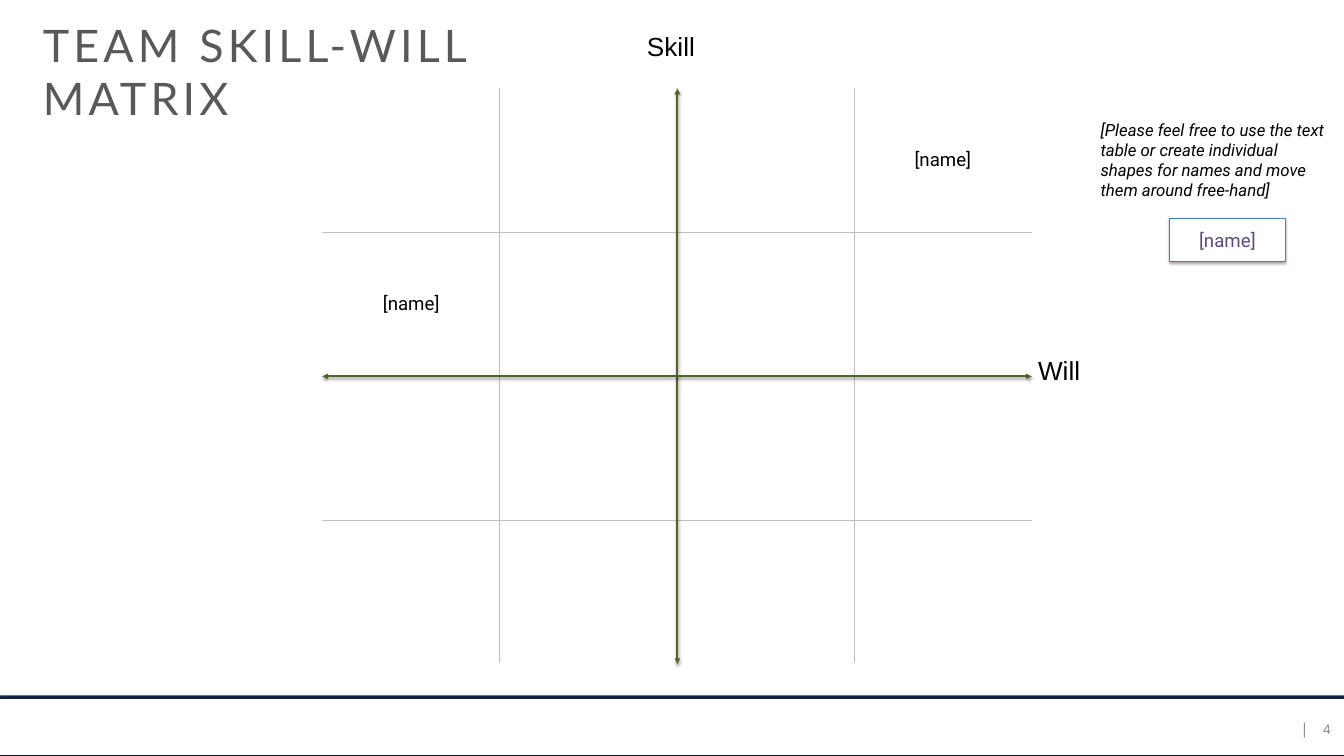
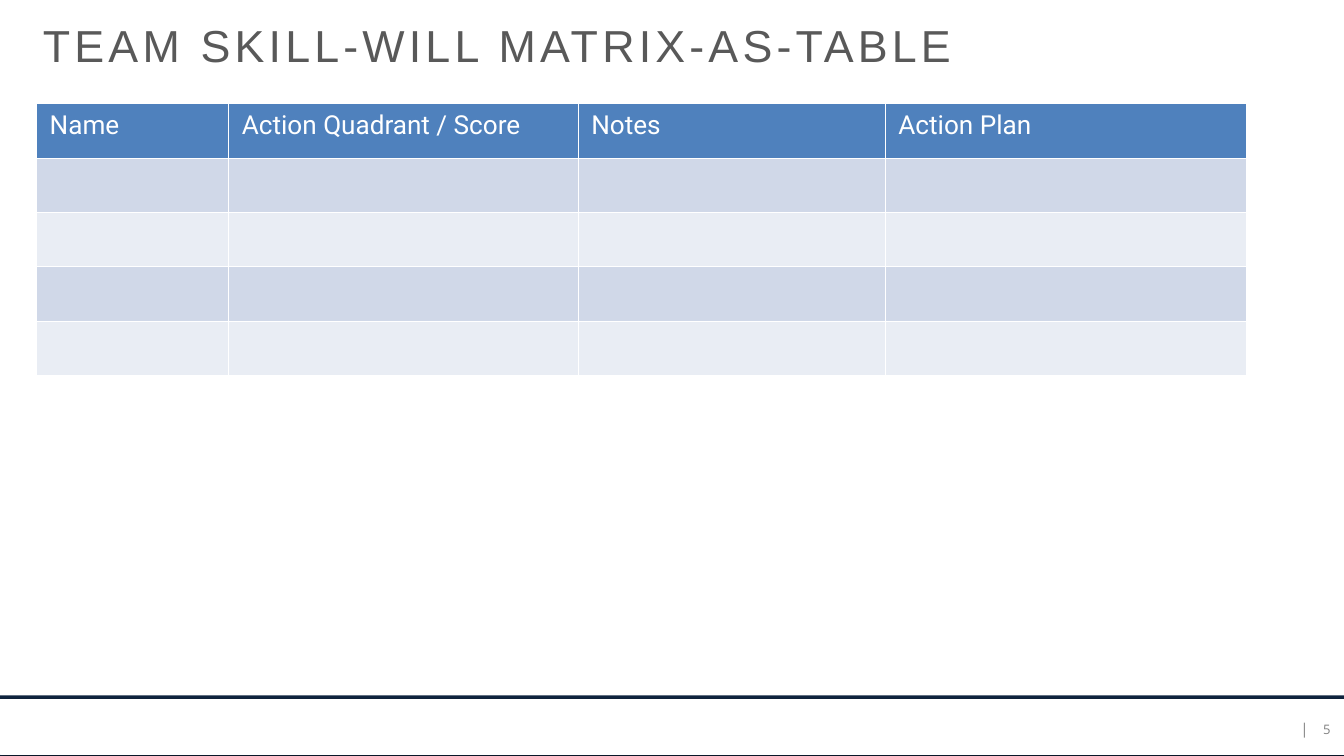
from lxml import etree
from pptx import Presentation
from pptx import util as u
from pptx.dml.color import RGBColor
from pptx.enum import shapes, text
from pptx.oxml import ns

COLORS = {
    "white": "FFFFFF", "navy": "0F243E", "gray": "808080", "title": "595959",
    "grid": "BFBFBF", "axis": "4F6228", "black": "000000", "edge": "4B7EBC",
    "purple": "604A7B", "head": "4F81BD", "dark": "D0D8E8", "light": "E9EDF4",
}
LEFT, MID, RIGHT = text.PP_ALIGN.LEFT, text.PP_ALIGN.CENTER, text.PP_ALIGN.RIGHT


def sub(parent, tag, **attrs):
    return etree.SubElement(parent, ns.qn("a:" + tag), attrs)


def color(name):
    return RGBColor.from_string(COLORS[name])


class Deck:
    def __init__(self):
        self.prs = Presentation()
        self.prs.slide_width = u.Inches(20)
        self.prs.slide_height = u.Inches(11.25)

    def start(self, number, title, font, width):
        self.slide = self.prs.slides.add_slide(self.prs.slide_layouts[6])
        self.rect(0, 0, 20, 11.25, "navy", shade=True)
        self.rect(0, 10.41, 20, 0.82, "white", "white", shade=True)
        self.label(number, 19.55, 10.74, 0.25, 0.24, 14, "Open Sans", "gray", RIGHT, tight=True)
        self.label("|", 19.35, 10.71, 0.12, 0.27, 16, "Open Sans", "gray", RIGHT, tight=True)
        self.rect(0, 0, 20, 10.35, "white")
        run = self.label(title, 0.54, 0.21, width, 0.91, 48, font, "title").runs[0]
        run._r.get_or_add_rPr().set("spc", "450")

    def put(self, frame, words, size, font, hue, align=LEFT, italic=False):
        para = frame.paragraphs[0]
        para.text = words
        para.alignment = align
        para.font.size = u.Pt(size)
        para.font.name = font
        para.font.italic = italic
        para.font.color.rgb = color(hue)
        return para

    def label(self, words, x, y, w, h, size, font, hue="black", align=LEFT,
              italic=False, tight=False):
        box = self.slide.shapes.add_textbox(*map(u.Inches, (x, y, w, h)))
        frame = box.text_frame
        frame.word_wrap = not tight
        frame.auto_size = text.MSO_AUTO_SIZE.SHAPE_TO_FIT_TEXT
        if tight:
            frame.margin_left = frame.margin_right = 0
            frame.margin_top = frame.margin_bottom = 0
        return self.put(frame, words, size, font, hue, align, italic)

    def shadow(self, props, alpha, dist):
        cast = sub(sub(props, "effectLst"), "outerShdw", blurRad=str(u.Pt(3.1)),
                   dist=str(u.Pt(dist)), dir="5400000", rotWithShape="0")
        sub(sub(cast, "srgbClr", val=COLORS["black"]), "alpha", val=str(alpha * 1000))

    def rect(self, x, y, w, h, fill, edge=None, shade=False):
        box = self.slide.shapes.add_shape(
            shapes.MSO_SHAPE.RECTANGLE, *map(u.Inches, (x, y, w, h)))
        box.fill.solid()
        box.fill.fore_color.rgb = color(fill)
        if edge:
            box.line.color.rgb = color(edge)
            box.line.width = u.Pt(0.75)
        else:
            box.line.fill.background()
        if shade:
            self.shadow(box._element.spPr, 35, 1.8)
        else:
            box.shadow.inherit = False
        return box

    def axis(self, x1, y1, x2, y2):
        line = self.slide.shapes.add_connector(
            shapes.MSO_CONNECTOR.STRAIGHT, *map(u.Inches, (x1, y1, x2, y2)))
        line.line.color.rgb = color("axis")
        line.line.width = u.Pt(2)
        for end in ("headEnd", "tailEnd"):
            sub(line.line._ln, end, type="triangle")
        self.shadow(line._element.spPr, 38, 1.6)

    def table(self, x, y, widths, height, rows):
        frame = self.slide.shapes.add_table(
            rows, len(widths), *map(u.Inches, (x, y, sum(widths), height * rows)))
        grid = frame.table
        grid.first_row = grid.horz_banding = False
        for col, width in zip(grid.columns, widths):
            col.width = u.Inches(width)
        for row in grid.rows:
            row.height = u.Inches(height)
        for cell in grid.iter_cells():
            cell.margin_left = cell.margin_right = u.Inches(0.2)
            cell.margin_top = cell.margin_bottom = u.Inches(0.1)
        return grid

    def borders(self, cell, hues):
        props = cell._tc.get_or_add_tcPr()
        for side, hue in zip("LRTB", hues):
            line = sub(props, "ln" + side, w=str(u.Pt(1)))
            sub(sub(line, "solidFill"), "srgbClr", val=COLORS[hue])


def matrix(deck):
    deck.start("4", "TEAM SKILL-WILL MATRIX", "Lato", 9.46)
    left, top, right, bottom = 4.8, 1.32, 15.35, 9.88
    count = 4
    grid = deck.table(left, top, [(right - left) / count] * count,
                      (bottom - top) / count, count)
    names = {(0, 3), (1, 0)}
    for r in range(count):
        for c in range(count):
            cell = grid.cell(r, c)
            outer = (c == 0, c == count - 1, r == 0, r == count - 1)
            deck.borders(cell, ["white" if out else "grid" for out in outer])
            cell.fill.background()
            if (r, c) in names:
                cell.vertical_anchor = text.MSO_ANCHOR.MIDDLE
                deck.put(cell.text_frame, "[name]", 20, "Roboto", "black", MID)
    deck.axis(10.08, top, 10.08, bottom)
    deck.axis(right, 5.6, left, 5.6)
    deck.label("Skill", 9.53, 0.41, 1.57, 0.57, 28, "Arial")
    deck.label("Will", right, 5.22, 1.57, 0.57, 28, "Arial")
    deck.label("[Please feel free to use the text table or create individual shapes "
               "for names and move them around free-hand]",
               16.28, 1.73, 3.53, 1.31, 18, "Roboto", italic=True)
    card = deck.rect(17.4, 3.25, 1.73, 0.64, "white", "edge", shade=True)
    card.text_frame.vertical_anchor = text.MSO_ANCHOR.MIDDLE
    deck.put(card.text_frame, "[name]", 20, "Roboto", "purple", MID)


def listing(deck):
    deck.start("5", "TEAM SKILL-WILL MATRIX-AS-TABLE", "Arial", 14.98)
    heads = ["Name", "Action Quadrant / Score", "Notes", "Action Plan"]
    bands = ["head", "dark", "light", "dark", "light"]
    grid = deck.table(0.54, 1.54, [2.86, 5.2, 4.57, 5.38], 0.81, len(bands))
    for r, band in enumerate(bands):
        for c, head in enumerate(heads):
            cell = grid.cell(r, c)
            deck.borders(cell, ["white"] * 4)
            cell.fill.solid()
            cell.fill.fore_color.rgb = color(band)
            if r == 0:
                deck.put(cell.text_frame, head, 28, "Roboto", "white")


def main():
    deck = Deck()
    matrix(deck)
    listing(deck)
    deck.prs.save("out.pptx")


if __name__ == "__main__":
    main()
